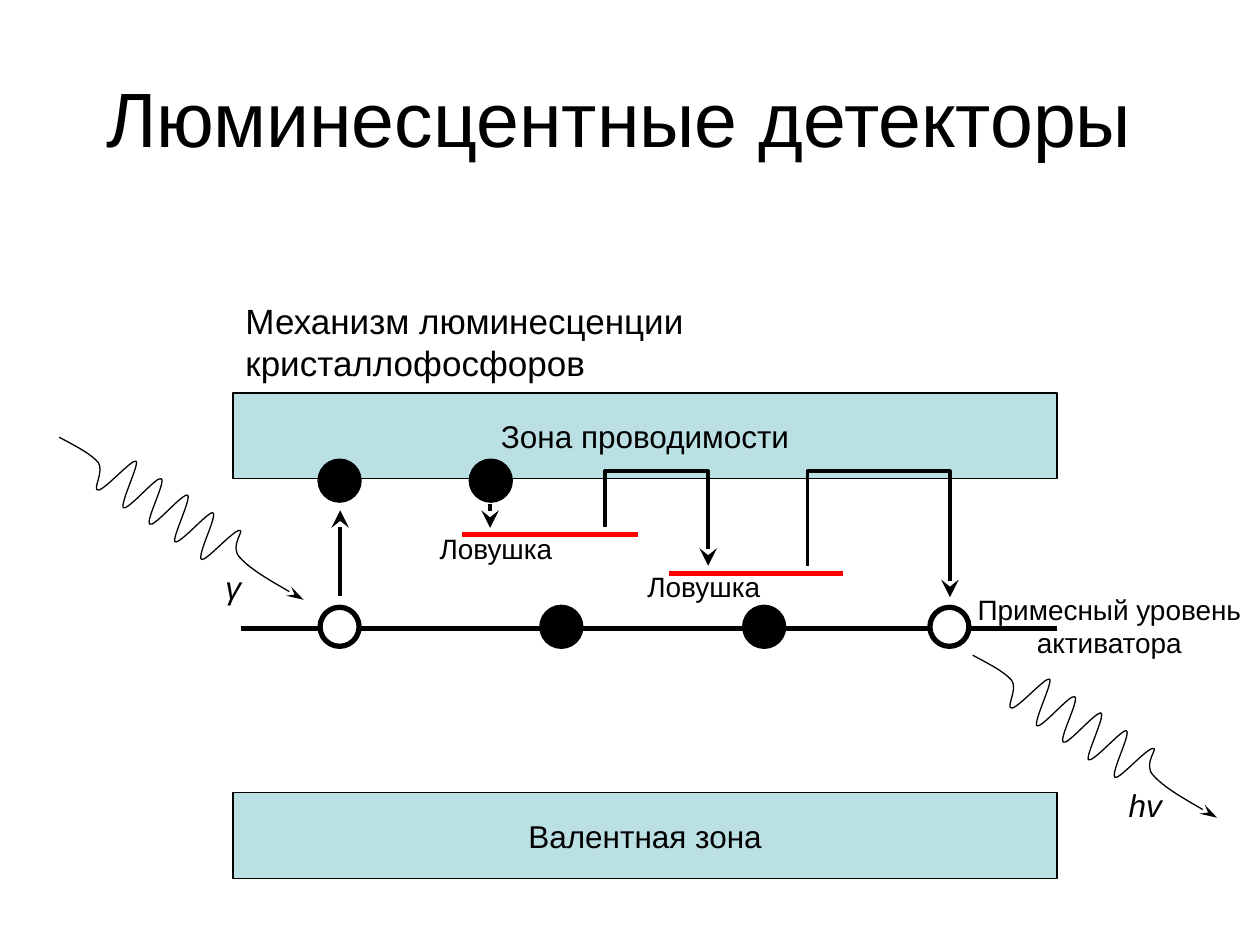
"""Slide on luminescence in crystal phosphors: energy bands, traps and photons."""
from lxml import etree
from pptx import Presentation
from pptx.dml.color import RGBColor
from pptx.enum import shapes, text
from pptx.oxml import ns
from pptx.util import Inches, Pt

BLACK = RGBColor(0x00, 0x00, 0x00)
WHITE = RGBColor(0xFF, 0xFF, 0xFF)
RED = RGBColor(0xFF, 0x00, 0x00)
BAND = RGBColor(0xBB, 0xE0, 0xE3)
MID = text.MSO_ANCHOR.MIDDLE
LEFT, CENTER = text.PP_ALIGN.LEFT, text.PP_ALIGN.CENTER

deck = Presentation()
deck.slide_width, deck.slide_height = Inches(10), Inches(7.5)
slide = deck.slides.add_slide(deck.slide_layouts[6])
parts = slide.shapes


def write(shape, words, size, align=LEFT, wrap=False, anchor=None, italic=None):
    frame = shape.text_frame
    frame.text = words
    for key, val in {"word_wrap": wrap, "vertical_anchor": anchor}.items():
        setattr(frame, key, val)
    for para in frame.paragraphs:
        para.alignment = align
        for run in para.runs:
            look = {"name": "Arial", "size": Pt(size), "italic": italic}
            for key, val in look.items():
                setattr(run.font, key, val)
            run.font.color.rgb = BLACK


def stroke(shape, color, width, head=None):
    shape.line.color.rgb = color
    shape.line.width = Pt(width)
    props = shape.element.spPr
    if head:
        tip = etree.SubElement(props.find(ns.qn("a:ln")), ns.qn("a:tailEnd"))
        for key, val in {"type": "stealth", "w": head, "len": "lg"}.items():
            tip.set(key, val)
    if props.find(ns.qn("a:effectLst")) is None:
        etree.SubElement(props, ns.qn("a:effectLst"))


title = parts.add_textbox(Inches(0.5), Inches(0.3), Inches(9), Inches(1.25))
write(title, "Люминесцентные детекторы ", 44, CENTER, True, MID)

for top, name in ((3.12, "Зона проводимости"), (6.29, "Валентная зона")):
    band = parts.add_shape(shapes.MSO_SHAPE.RECTANGLE, Inches(1.85), Inches(top),
                           Inches(6.54), Inches(0.68))
    band.fill.solid()
    band.fill.fore_color.rgb = BAND
    stroke(band, BLACK, 0.75)
    write(band, name, 18, CENTER, False, MID)

lines = (
    (1.91, 4.99, 8.39, 4.99, BLACK, 3, None),
    (2.7, 4.73, 2.7, 4.05, BLACK, 2, "lg"),
    (3.67, 4.24, 5.06, 4.24, RED, 3, None),
    (5.31, 4.55, 6.69, 4.55, RED, 3, None),
    (3.89, 4, 3.89, 4.19, BLACK, 2, "lg"),
)
for *ends, color, width, head in lines:
    line = parts.add_connector(shapes.MSO_CONNECTOR.STRAIGHT, *map(Inches, ends))
    stroke(line, color, width, head)

dots = (
    (2.54, 4.82, WHITE), (2.54, 3.66, BLACK), (4.3, 4.82, BLACK),
    (3.74, 3.66, BLACK), (5.91, 4.82, BLACK), (7.38, 4.82, WHITE),
)
for left, top, color in dots:
    dot = parts.add_shape(shapes.MSO_SHAPE.OVAL, Inches(left), Inches(top),
                          Inches(0.31), Inches(0.31))
    dot.fill.solid()
    dot.fill.fore_color.rgb = color
    stroke(dot, BLACK, 3)

wave = (
    (0.47, 3.47), (0.6, 3.54), (0.72, 3.6), (0.78, 3.67),
    (0.83, 3.74), (0.73, 3.89), (0.78, 3.89),
    (0.83, 3.89), (1.05, 3.64), (1.08, 3.66),
    (1.11, 3.68), (0.95, 4), (0.98, 4.03),
    (1.02, 4.05), (1.25, 3.77), (1.28, 3.8),
    (1.32, 3.82), (1.15, 4.14), (1.19, 4.16),
    (1.22, 4.19), (1.45, 3.91), (1.49, 3.93),
    (1.52, 3.96), (1.36, 4.28), (1.39, 4.3),
    (1.43, 4.32), (1.66, 4.05), (1.69, 4.07),
    (1.73, 4.09), (1.56, 4.41), (1.6, 4.44),
    (1.63, 4.46), (1.85, 4.21), (1.9, 4.21),
    (1.95, 4.2), (1.82, 4.33), (1.9, 4.42),
    (1.99, 4.52), (2.2, 4.64), (2.41, 4.76),
)
tracks = [
    ([(4.8, 4.18), (4.8, 3.74), (5.62, 3.74), (5.62, 4.49)], 2, "lg", False),
    ([(6.41, 4.49), (6.41, 3.74), (7.54, 3.74), (7.54, 4.74)], 2, "lg", False),
]
for dx, dy in ((0, 0), (7.25, 1.73)):
    tracks.append(([(x + dx, y + dy) for x, y in wave], 0.75, "med", True))
for spots, width, head, curved in tracks:
    first, *rest = [(Inches(x), Inches(y)) for x, y in spots]
    pen = parts.build_freeform(*first)
    pen.add_line_segments(rest, close=False)
    track = pen.convert_to_shape()
    track.fill.background()
    stroke(track, BLACK, width, head)
    if curved:
        legs = list(track.element.iter(ns.qn("a:lnTo")))
        route = legs[0].getparent()
        for i in range(0, len(legs), 3):
            bend = etree.SubElement(route, ns.qn("a:cubicBezTo"))
            for leg in legs[i:i + 3]:
                bend.append(leg[0])
                route.remove(leg)

notes = (
    (1.69, 4.46, 0.33, 0.4, "γ", 18, LEFT, False, None, True),
    (8.86, 6.19, 0.47, 0.4, "hv", 18, LEFT, False, None, True),
    (7.65, 4.65, 2.31, 0.64, "Примесный уровень\vактиватора", 16, CENTER),
    (3.39, 4.17, 1.1, 0.37, "Ловушка", 16),
    (5.04, 4.47, 1.1, 0.37, "Ловушка", 16),
    (1.85, 2.33, 6.2, 0.43, "Механизм люминесценции кристаллофосфоров", 20, LEFT, True),
)
for left, top, wide, high, *rest in notes:
    note = parts.add_textbox(Inches(left), Inches(top), Inches(wide), Inches(high))
    write(note, *rest)

deck.save("out.pptx")
